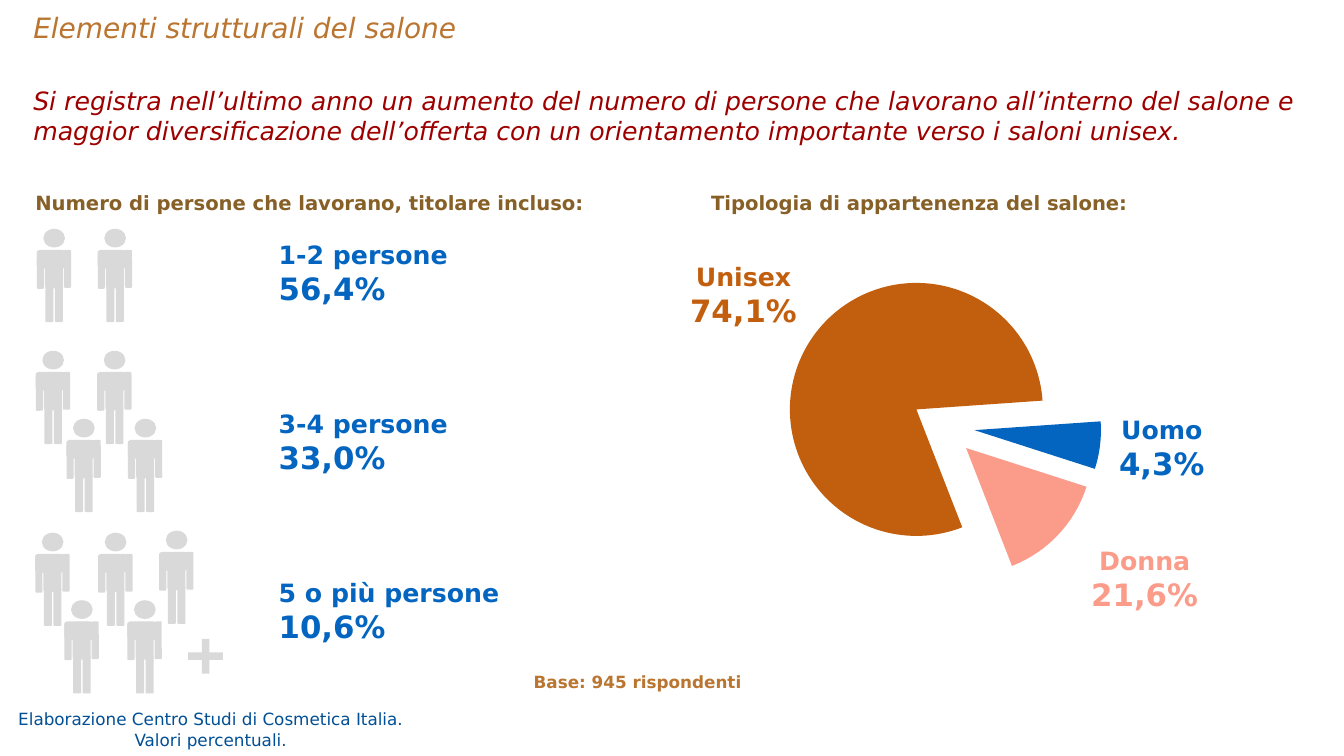
"""Build the slide on the structure of hair salons: staff size and type of clientele."""
from pptx import Presentation, util as u
from pptx.chart.data import CategoryChartData
from pptx.dml.color import RGBColor
from pptx.enum import chart as charts, shapes, text
from pptx.oxml import parse_xml
from pptx.oxml.ns import nsdecls, qn

PX = 9144
FONT = "DejaVu Sans"
COLORS = {
    "tan": "BA7530", "lead": "9E0000", "heading": "876028", "source": "014F95",
    "figure": "D9D9D9", "uomo": "0365C0", "donna": "FB9B89", "unisex": "C25F0E",
}
HEAD = (13, 0, 43, 37)
LIMBS = [
    (17, 110, 16, 75), (36, 110, 16, 75), (16, 43, 36, 75),
    (54, 42, 14, 75), (0, 44, 14, 75), (0, 42, 57, 37),
]


def px(*lengths):
    """Turn px lengths into EMU."""
    return [u.Emu(length * PX) for length in lengths]


def rgb(name):
    """Look up a colour by name."""
    return RGBColor.from_string(COLORS[name])


def write(holder, *lines, color, bold=False, italic=False, align="LEFT", spacing=1.0):
    """Fill a text holder with (wording, size) lines in one format."""
    frame = holder.text_frame
    frame.word_wrap = True
    frame.auto_size = text.MSO_AUTO_SIZE.SHAPE_TO_FIT_TEXT
    frame.vertical_anchor = text.MSO_ANCHOR.MIDDLE
    frame.margin_left = frame.margin_right = frame.margin_top = frame.margin_bottom = u.Emu(6 * PX)
    for index, (wording, size) in enumerate(lines):
        line = frame.add_paragraph() if index else frame.paragraphs[0]
        line.alignment = text.PP_ALIGN[align]
        line.line_spacing = spacing
        line.space_before = u.Pt(0)
        run = line.add_run()
        run.text = wording
        font = run.font
        font.name, font.size, font.bold, font.italic = FONT, u.Pt(size), bold, italic
        font.color.rgb = rgb(color)


def place(holder, *box):
    """Move a placeholder to a px box."""
    holder.left, holder.top, holder.width, holder.height = px(*box)
    return holder


def label(slide, box, *lines, **style):
    """Add a text box with formatted lines."""
    write(slide.shapes.add_textbox(*px(*box)), *lines, **style)


def solid(group, kind, box):
    """Add a plain grey shape to a group."""
    piece = group.shapes.add_shape(kind, *px(*box))
    piece.shadow.inherit = False
    piece.fill.solid()
    piece.fill.fore_color.rgb = rgb("figure")
    piece.line.fill.background()
    return piece


def person(group, left, top):
    """Draw one standing figure."""
    parts = [(shapes.MSO_SHAPE.OVAL, HEAD)]
    parts += [(shapes.MSO_SHAPE.ROUNDED_RECTANGLE, limb) for limb in LIMBS]
    for kind, (x, y, width, height) in parts:
        solid(group, kind, (left + x, top + y, width, height))


def crowd(slide, positions):
    """Group several figures and return the group."""
    group = slide.shapes.add_group_shape()
    for left, top in positions:
        person(group, left, top)
    return group


def salon_pie(slide, box):
    """Add the exploded pie of salon types."""
    data = CategoryChartData()
    data.categories = ["1", "2", "3"]
    data.add_series("Series 1", (6, 14, 79))
    chart = slide.shapes.add_chart(charts.XL_CHART_TYPE.PIE_EXPLODED, *px(*box), data).chart
    chart.has_legend = chart.has_title = False
    chart.font.name, chart.font.size = "Arial", u.Pt(18)
    chart.font.color.rgb = RGBColor(0, 0, 0)
    pie = chart.plots[0]
    pie.vary_by_categories = True
    for index, name in enumerate(("uomo", "donna", "unisex")):
        fill = pie.series[0].points[index].format.fill
        fill.solid()
        fill.fore_color.rgb = rgb(name)
    area = chart.element.find(".//" + qn("c:plotArea"))
    for tag in ("c:layout", "c:pieChart/c:firstSliceAng"):
        for old in area.xpath(tag):
            old.getparent().remove(old)
    frame = zip("xywh", (0.18, 0.13, 0.55, 0.74))
    sizes = "".join(f'<c:{side} val="{share}"/>' for side, share in frame)
    area.insert(0, parse_xml(
        f'<c:layout {nsdecls("c")}><c:manualLayout><c:layoutTarget val="inner"/>'
        f'<c:xMode val="edge"/><c:yMode val="edge"/>{sizes}</c:manualLayout></c:layout>'))
    area.find(qn("c:pieChart")).append(
        parse_xml(f'<c:firstSliceAng {nsdecls("c")} val="86"/>'))


def main():
    """Build and save the slide."""
    deck = Presentation()
    deck.slide_width, deck.slide_height = px(2667, 1500)
    slide = deck.slides.add_slide(deck.slide_layouts[1])

    write(place(slide.shapes.title, 60, 7, 2544, 83),
          ("Elementi strutturali del salone", 40), color="tan", italic=True, spacing=1.2)
    lead = place(slide.placeholders[1], 60, 163, 2544, 132)
    properties = lead.text_frame.paragraphs[0]._p.get_or_add_pPr()
    properties.set("marL", "0")
    properties.set("indent", "0")
    properties.append(parse_xml(f'<a:buNone {nsdecls("a")}/>'))
    write(lead, ("Si registra nell’ultimo anno un aumento del numero di persone che lavorano "
                 "all’interno del salone e maggior diversificazione dell’offerta con un "
                 "orientamento importante verso i saloni unisex.", 36),
          color="lead", italic=True)

    for left, width, heading in (
        (64, 1228, "Numero di persone che lavorano, titolare incluso:"),
        (1405, 982, "Tipologia di appartenenza del salone:"),
    ):
        label(slide, (left, 374, width, 58), (heading, 28), color="heading", bold=True)

    crowd(slide, [(73, 454), (194, 454)])
    crowd(slide, [(71 + 61 * i, 696 + 135 * (i % 2)) for i in range(4)])
    largest = crowd(slide, [(70, 1057), (128, 1191), (316, 1053), (195, 1057), (253, 1191)])
    plus = solid(largest, shapes.MSO_SHAPE.MATH_PLUS, (361, 1255, 94, 94))
    plus.adjustments[0] = 0.16

    staff = [("1-2 persone", "56,4%"), ("3-4 persone", "33,0%"), ("5 o più persone", "10,6%")]
    for row, (size, share) in enumerate(staff):
        label(slide, (547, 469 + 335 * row, 477, 146), (size, 36), (share, 44),
              color="uomo", bold=True)

    salon_pie(slide, (1346, 422, 1155, 848))
    for left, top, kind, share in (
        (2137, 1075, "Donna", "21,6%"),
        (2171, 816, "Uomo", "4,3%"),
        (1341, 512, "Unisex", "74,1%"),
    ):
        label(slide, (left, top, 269, 146), (kind, 36), (share, 44),
              color=kind.lower(), bold=True, align="CENTER")

    label(slide, (-3, 1401, 842, 92), ("Elaborazione Centro Studi di Cosmetica Italia.", 24),
          ("Valori percentuali.", 24), color="source", align="CENTER")
    label(slide, (1053, 1322, 473, 55), ("Base: 945 rispondenti", 24),
          color="tan", bold=True, spacing=1.2)
    deck.save("out.pptx")


if __name__ == "__main__":
    main()
